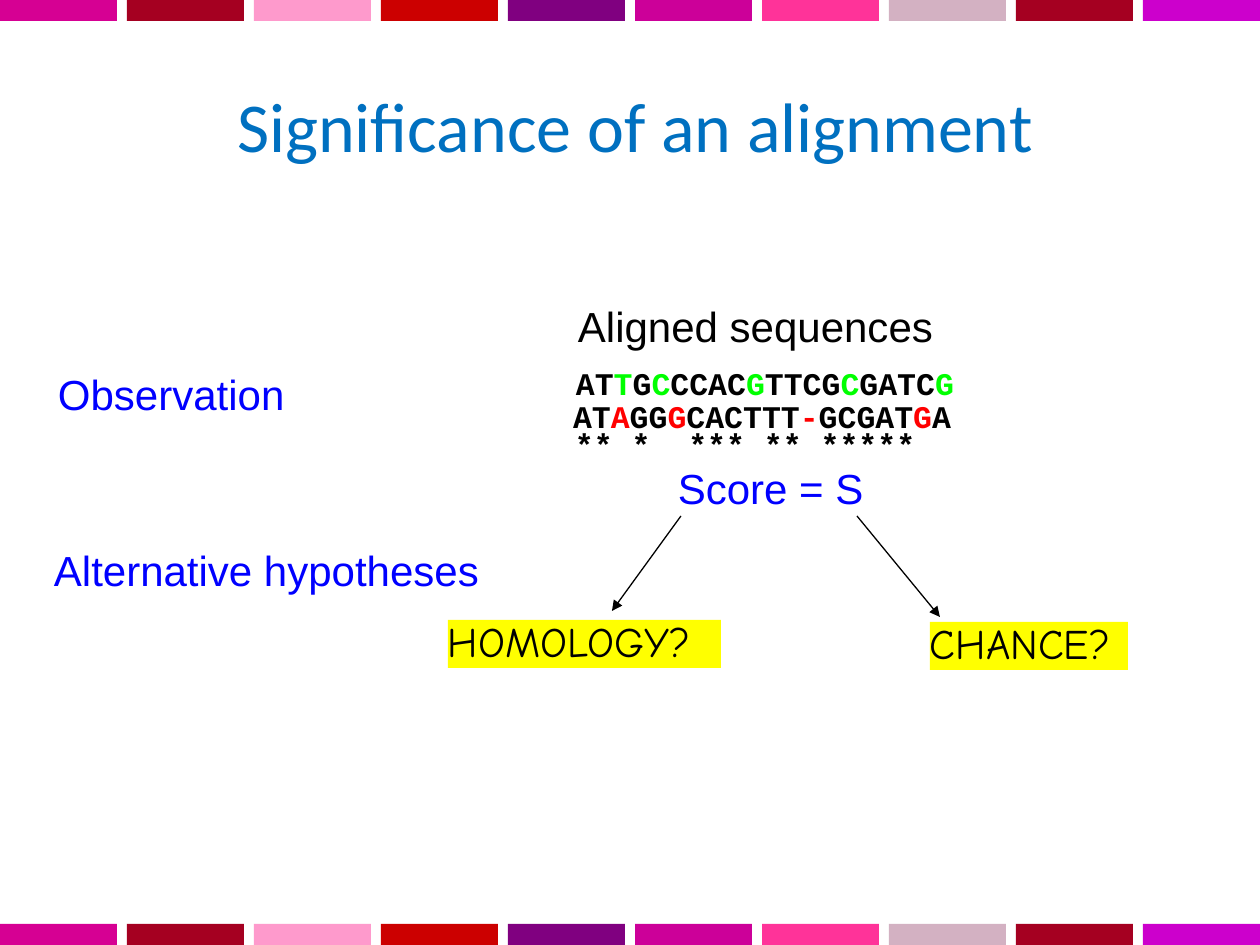
from dataclasses import dataclass
from itertools import groupby
from typing import Optional

from lxml.etree import SubElement
from pptx import Presentation
from pptx.dml.color import RGBColor
from pptx.enum.shapes import MSO_CONNECTOR as Connector, MSO_SHAPE as Shape
from pptx.enum.text import MSO_ANCHOR as Anchor, PP_ALIGN as Align
from pptx.oxml.ns import qn
from pptx.slide import Slide
from pptx.util import Pt

EMU_PER_PX = 914400 // 126
SLIDE_WIDTH, SLIDE_HEIGHT = 1260, 945
BAR_WIDTH, BAR_HEIGHT, BAR_PITCH = 117, 21, 127

COLORS = {
    "black": "000000", "blue": "0000FF", "title": "0070C0",
    "red": "FF0000", "green": "00FF00", "yellow": "FFFF00",
}
BAR_COLORS = ["D60093", "A50021", "FE9ACC", "CC0000", "800080",
              "CC0099", "FF3399", "D3B1C2", "A50021", "CC00CC"]

# Text formats
TITLE = {"name": "Calibri", "size": Pt(40)}
LABEL = {"name": "Arial", "size": Pt(24)}
HYPOTHESIS = {"name": "Comic Neue", "size": Pt(24)}
SEQUENCE = {"name": "Courier New", "size": Pt(18), "bold": True}


@dataclass
class Label:
    text: str
    left: int
    top: int
    width: int
    height: int
    font: dict
    color: str = "black"
    fill: Optional[str] = None
    spacing: float = 0.93
    align: Align = Align.LEFT
    marked: tuple[int, ...] = ()  # letter positions drawn in mark_color
    mark_color: str = "black"


@dataclass
class Arrow:
    start: tuple[int, int]
    end: tuple[int, int]


LABELS = [
    Label("Significance of an alignment", 10, 83, 1250, 86, TITLE, "title",
          spacing=1.0, align=Align.CENTER),
    Label("Observation", 58, 373, 300, 48, LABEL, "blue"),
    Label("Alternative hypotheses", 54, 549, 430, 48, LABEL, "blue"),
    Label("Aligned sequences", 578, 305, 431, 48, LABEL),
    Label("ATTGCCCACGTTCGCGATCG", 576, 367, 455, 35, SEQUENCE, spacing=0.94,
          marked=(2, 4, 9, 14, 19), mark_color="green"),
    Label("ATAGGGCACTTT-GCGATGA", 573, 400, 461, 35, SEQUENCE, spacing=0.94,
          marked=(2, 5, 12, 18), mark_color="red"),
    Label("** *  *** ** *****", 575, 428, 367, 35, SEQUENCE, spacing=0.94),
    Label("Score = S", 678, 467, 240, 48, LABEL, "blue"),
    Label("HOMOLOGY?", 448, 620, 273, 48, HYPOTHESIS, fill="yellow"),
    Label("CHANCE?", 930, 622, 198, 48, HYPOTHESIS, fill="yellow"),
]
ARROWS = [Arrow((681, 516), (612, 611)), Arrow((857, 516), (940, 617))]


def px(*lengths: int) -> list[int]:
    return [length * EMU_PER_PX for length in lengths]


def apply(target, values: dict) -> None:
    for name, value in values.items():
        setattr(target, name, value)


def draw_bars(slide: Slide, top: int) -> None:
    for index, color in enumerate(BAR_COLORS):
        bar = slide.shapes.add_shape(
            Shape.RECTANGLE, *px(index * BAR_PITCH, top, BAR_WIDTH, BAR_HEIGHT))
        bar.shadow.inherit = False
        bar.fill.solid()
        bar.fill.fore_color.rgb = RGBColor.from_string(color)
        bar.line.fill.background()


def draw_label(slide: Slide, label: Label) -> None:
    box = slide.shapes.add_textbox(
        *px(label.left, label.top, label.width, label.height))
    if label.fill:
        box.fill.solid()
        box.fill.fore_color.rgb = RGBColor.from_string(COLORS[label.fill])
    apply(box.text_frame, {
        "word_wrap": True, "vertical_anchor": Anchor.TOP,
        "margin_left": 0, "margin_top": 0, "margin_right": 0, "margin_bottom": 0,
    })
    paragraph = box.text_frame.paragraphs[0]
    apply(paragraph, {"alignment": label.align, "line_spacing": label.spacing})

    # One run for each stretch of equally coloured letters
    letters = enumerate(label.text)
    for is_marked, group in groupby(letters, lambda item: item[0] in label.marked):
        run = paragraph.add_run()
        run.text = "".join(letter for _, letter in group)
        apply(run.font, label.font)
        color = label.mark_color if is_marked else label.color
        run.font.color.rgb = RGBColor.from_string(COLORS[color])


def draw_arrow(slide: Slide, arrow: Arrow) -> None:
    connector = slide.shapes.add_connector(
        Connector.STRAIGHT, *px(*arrow.start, *arrow.end))
    connector.line.width = Pt(0.75)
    connector.line.color.rgb = RGBColor.from_string(COLORS["black"])
    SubElement(connector.line._get_or_add_ln(), qn("a:tailEnd"), type="triangle")
    SubElement(connector._element.spPr, qn("a:effectLst"))


def main() -> None:
    presentation = Presentation()
    presentation.slide_width, presentation.slide_height = px(SLIDE_WIDTH, SLIDE_HEIGHT)
    slide = presentation.slides.add_slide(presentation.slide_layouts[6])

    # Colour bands along the top and bottom edges
    for top in (0, SLIDE_HEIGHT - BAR_HEIGHT):
        draw_bars(slide, top)

    # Title, alignment and hypotheses
    for label in LABELS:
        draw_label(slide, label)

    # From the score to both hypotheses
    for arrow in ARROWS:
        draw_arrow(slide, arrow)

    presentation.save("out.pptx")


if __name__ == "__main__":
    main()
